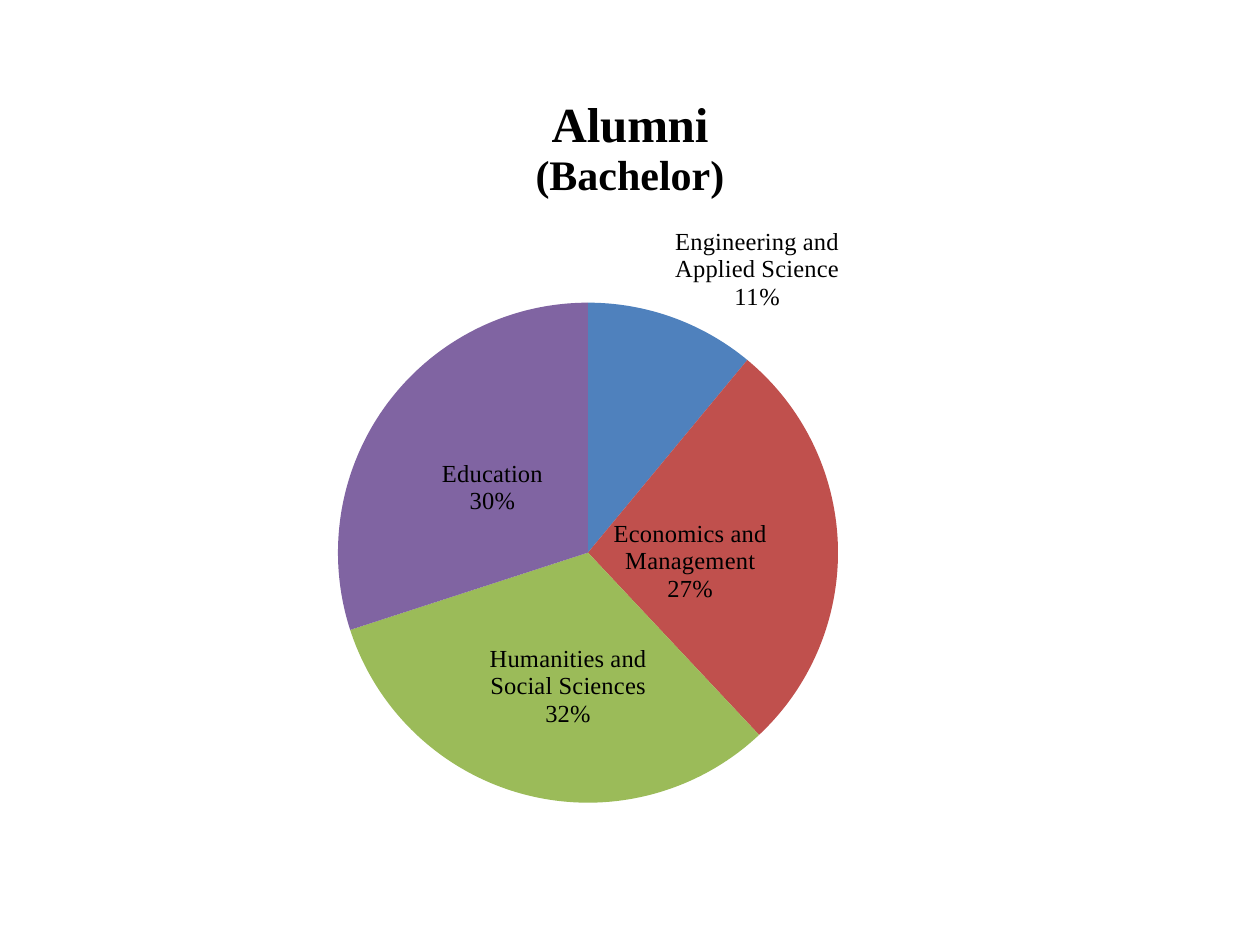
"""Build the slide with the pie chart of bachelor alumni by faculty."""
import pptx
import pptx.chart.data
import pptx.dml.color
import pptx.enum.chart
import pptx.oxml
import pptx.oxml.ns
import pptx.util

Pt = pptx.util.Pt
POSITION = pptx.enum.chart.XL_LABEL_POSITION
SERIF = "Times New Roman"
FACULTIES = [
    ("Engineering and Applied Science", 11, "4F81BD", None),
    ("Economics and Management", 27, "C0504D", (-0.02, 0.015)),
    ("Humanities and Social Sciences", 32, "9BBB59", (0.01, 0.015)),
    ("Education", 30, "8064A2", (0.005, 0.01)),
]


def rgb(color):
    """Return the colour for a hex string."""
    return pptx.dml.color.RGBColor.from_string(color)


def set_font(font, size, name=SERIF, bold=False):
    """Set size, typeface and weight of a black font."""
    font.size, font.name, font.bold = Pt(size), name, bold
    font.color.rgb = rgb("000000")


def make_layout(**values):
    """Return a manual chart layout with the given settings."""
    settings = "".join(f'<c:{tag} val="{v}"/>' for tag, v in values.items())
    return pptx.oxml.parse_xml(
        f'<c:layout {pptx.oxml.ns.nsdecls("c")}>'
        f"<c:manualLayout>{settings}</c:manualLayout></c:layout>")


def add_pie(s):
    """Add the pie chart of faculty shares."""
    data = pptx.chart.data.CategoryChartData()
    data.categories = [name for name, *_ in FACULTIES]
    data.add_series("Series 1", [share for _, share, *_ in FACULTIES])
    chart = s.shapes.add_chart(
        pptx.enum.chart.XL_CHART_TYPE.PIE,
        Pt(36), Pt(39.6), Pt(648), Pt(478), data).chart
    set_font(chart.font, 10, "Calibri")
    chart.has_legend = False
    chart.plots[0].vary_by_categories = True
    return chart


def add_title(chart, lines):
    """Write the chart title, one paragraph for each text and size."""
    tf = chart.chart_title.text_frame
    for i, (text, size) in enumerate(lines):
        p = tf.add_paragraph() if i else tf.paragraphs[0]
        p.text = text
        set_font(p.font, size, bold=True)


def place_plot(chart):
    """Fix the inner plot area inside the chart."""
    area = chart._chartSpace.chart.plotArea
    for old in area.findall(pptx.oxml.ns.qn("c:layout")):
        area.remove(old)
    area.insert(0, make_layout(
        layoutTarget="inner", xMode="edge", yMode="edge",
        x=0.2425, y=0.279, w=0.441, h=0.598))


def show_shares(element):
    """Make a label element show category and percentage on two lines."""
    qn = pptx.oxml.ns.qn
    for tag, shown in (("c:showVal", 0), ("c:showCatName", 1), ("c:showPercent", 1)):
        element.find(qn(tag)).set("val", str(shown))
    separator = pptx.oxml.parse_xml(
        f'<c:separator {pptx.oxml.ns.nsdecls("c")}>\n</c:separator>')
    element.find(qn("c:showBubbleSize")).addnext(separator)


def format_slices(chart):
    """Colour the slices and label each with its faculty and share."""
    series = chart.plots[0].series[0]
    labels = series.data_labels
    labels.position = POSITION.OUTSIDE_END
    set_font(labels.font, 14)
    for i, (_, _, color, offset) in enumerate(FACULTIES):
        point = series.points[i]
        point.format.fill.solid()
        point.format.fill.fore_color.rgb = rgb(color)
        if offset:
            set_font(point.data_label.font, 14)
            point.data_label.position = POSITION.CENTER
    for element in chart._chartSpace.xpath(".//c:ser/c:dLbls | .//c:ser/c:dLbls/c:dLbl"):
        show_shares(element)
    for element in chart._chartSpace.xpath(".//c:ser/c:dLbls/c:dLbl"):
        idx = element.find(pptx.oxml.ns.qn("c:idx"))
        x, y = FACULTIES[int(idx.get("val"))][3]
        idx.addnext(make_layout(x=x, y=y))


def main():
    """Build and save the presentation."""
    prs = pptx.Presentation()
    prs.slide_width, prs.slide_height = Pt(720), Pt(540)
    s = prs.slides.add_slide(prs.slide_layouts[6])
    chart = add_pie(s)
    add_title(chart, [("Alumni", 28), ("(Bachelor)", 24)])
    place_plot(chart)
    format_slices(chart)
    prs.save("out.pptx")


if __name__ == "__main__":
    main()
